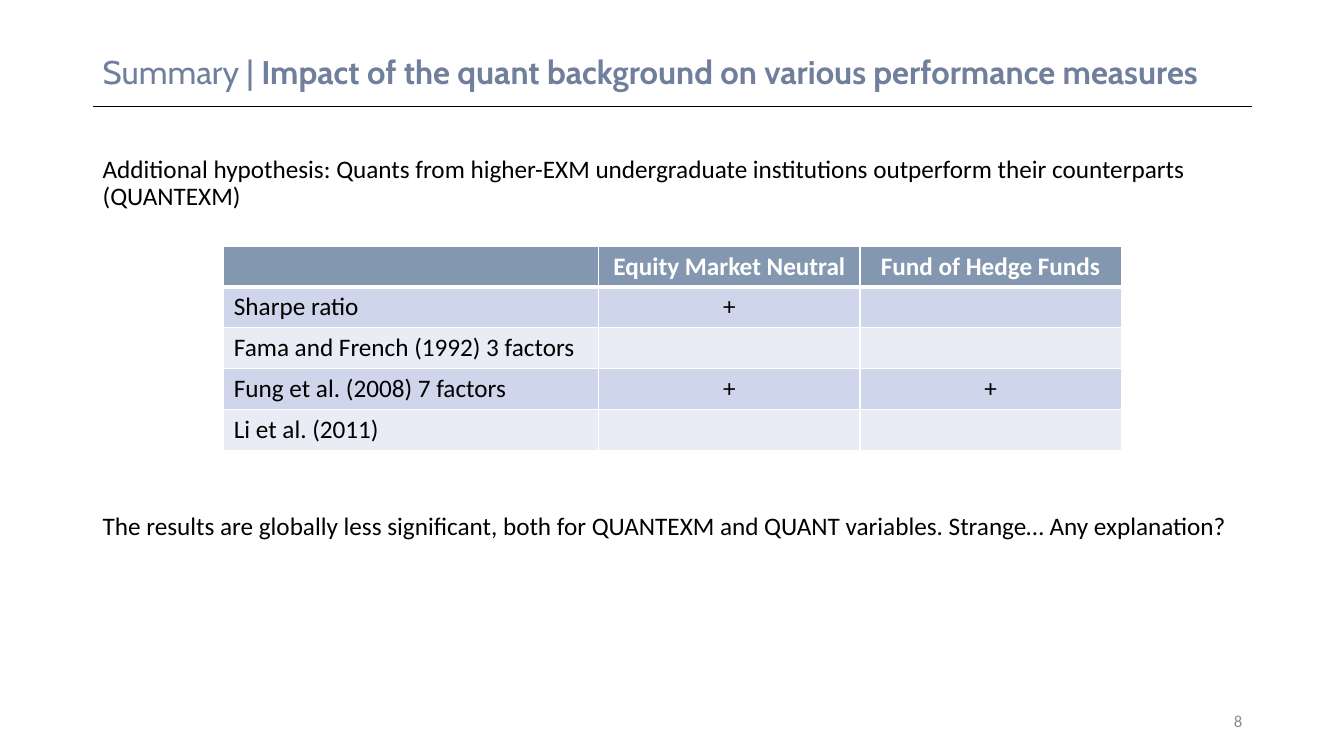
import pptx
import pptx.util
import pptx.dml.color
import pptx.enum.shapes
import pptx.enum.text
import pptx.oxml
import pptx.oxml.ns
from lxml import etree

Inches = pptx.util.Inches
Pt = pptx.util.Pt
RGBColor = pptx.dml.color.RGBColor
ALIGN = pptx.enum.text.PP_ALIGN
ANCHOR = pptx.enum.text.MSO_ANCHOR

TITLE = ("Summary | ", "Impact of the quant background on various performance measures")
HYPOTHESIS = (
    "Additional hypothesis: Quants from higher-EXM undergraduate institutions "
    "outperform their counterparts (QUANTEXM)"
)
CONCLUSION = (
    "The results are globally less significant, both for QUANTEXM and QUANT "
    "variables. Strange… Any explanation?"
)
PAGE_NUMBER = "8"
RESULTS = [
    ("", "Equity Market Neutral", "Fund of Hedge Funds"),
    ("Sharpe ratio", "+", ""),
    ("Fama and French (1992) 3 factors", "", ""),
    ("Fung et al. (2008) 7 factors", "+", "+"),
    ("Li et al. (2011)", "", ""),
]
COLUMN_WIDTHS = (3.72, 2.59, 2.59)
TABLE_HEIGHT = 2.03
LEFT, WIDTH, RULE_Y = 0.92, 11.5, 1.06

SLATE = RGBColor(0x70, 0x7F, 0x9C)
HEADER = RGBColor(0x84, 0x97, 0xB0)
BANDS = (RGBColor(0xE9, 0xEB, 0xF5), RGBColor(0xCF, 0xD5, 0xEA))
BLACK = RGBColor(0, 0, 0)
WHITE = RGBColor(255, 255, 255)
GREY = RGBColor(0x8C, 0x8C, 0x8C)


def style(paragraph, size, color, font="Calibri", bold=False):
    for run in paragraph.runs:
        run.font.size = Pt(size)
        run.font.name = font
        run.font.color.rgb = color
        run.font.bold = bold


def add_text(slide, left, top, width, height, anchor):
    frame = slide.shapes.add_textbox(
        Inches(left), Inches(top), Inches(width), Inches(height)
    ).text_frame
    frame.word_wrap = True
    frame.vertical_anchor = anchor
    return frame


def set_borders(cell, bottom_width):
    properties = cell._tc.get_or_add_tcPr()
    widths = {"lnL": 1, "lnR": 1, "lnT": 1, "lnB": bottom_width}
    for position, (side, width) in enumerate(widths.items()):
        border = pptx.oxml.parse_xml(
            f'<a:{side} {pptx.oxml.ns.nsdecls("a")} w="{Pt(width)}">'
            f'<a:solidFill><a:srgbClr val="{WHITE}"/></a:solidFill></a:{side}>'
        )
        properties.insert(position, border)


def add_title(slide):
    frame = add_text(slide, LEFT, 0.4, WIDTH, 0.66, ANCHOR.MIDDLE)
    title = frame.paragraphs[0]
    title.line_spacing = 0.9
    for part in TITLE:
        title.add_run().text = part
    style(title, 23.4, SLATE, "Cabin")
    title.runs[1].font.bold = True

    rule = slide.shapes.add_connector(
        pptx.enum.shapes.MSO_CONNECTOR.STRAIGHT,
        Inches(LEFT), Inches(RULE_Y), Inches(LEFT + WIDTH), Inches(RULE_Y),
    )
    rule.line.color.rgb = BLACK
    rule.line.width = Pt(0.5)
    etree.SubElement(rule._element.spPr, pptx.oxml.ns.qn("a:effectLst"))


def add_body(slide):
    frame = add_text(slide, LEFT, 1.07, WIDTH, 5.51, ANCHOR.TOP)
    frame.margin_top = Inches(0.48)
    frame.text = HYPOTHESIS
    conclusion = frame.add_paragraph()
    conclusion.text = CONCLUSION
    conclusion.space_before = Pt(216.5)
    for paragraph in frame.paragraphs:
        paragraph.line_spacing = 0.9
        style(paragraph, 18, BLACK)


def add_results(slide):
    results = slide.shapes.add_table(
        len(RESULTS), len(COLUMN_WIDTHS), Inches(2.22), Inches(2.44),
        Inches(sum(COLUMN_WIDTHS)), Inches(TABLE_HEIGHT),
    ).table
    for column, width in zip(results.columns, COLUMN_WIDTHS):
        column.width = Inches(width)
    for r, texts in enumerate(RESULTS):
        is_header = r == 0
        results.rows[r].height = Inches(TABLE_HEIGHT / len(RESULTS))
        for c, text in enumerate(texts):
            cell = results.cell(r, c)
            cell.fill.solid()
            cell.fill.fore_color.rgb = HEADER if is_header else BANDS[r % 2]
            set_borders(cell, 3 if is_header else 1)
            if text:
                cell.text_frame.text = text
                paragraph = cell.text_frame.paragraphs[0]
                paragraph.alignment = ALIGN.CENTER if c else ALIGN.LEFT
                style(paragraph, 18, WHITE if is_header else BLACK, bold=is_header)


def add_page_number(slide):
    frame = add_text(slide, 9.42, 6.95, 3, 0.4, ANCHOR.MIDDLE)
    frame.text = PAGE_NUMBER
    frame.paragraphs[0].alignment = ALIGN.RIGHT
    style(frame.paragraphs[0], 12, GREY)


def main():
    deck = pptx.Presentation()
    deck.slide_width, deck.slide_height = Inches(13.33), Inches(7.5)
    slide = deck.slides.add_slide(deck.slide_layouts[6])
    add_title(slide)
    add_body(slide)
    add_page_number(slide)
    add_results(slide)
    deck.save("out.pptx")


if __name__ == "__main__":
    main()
